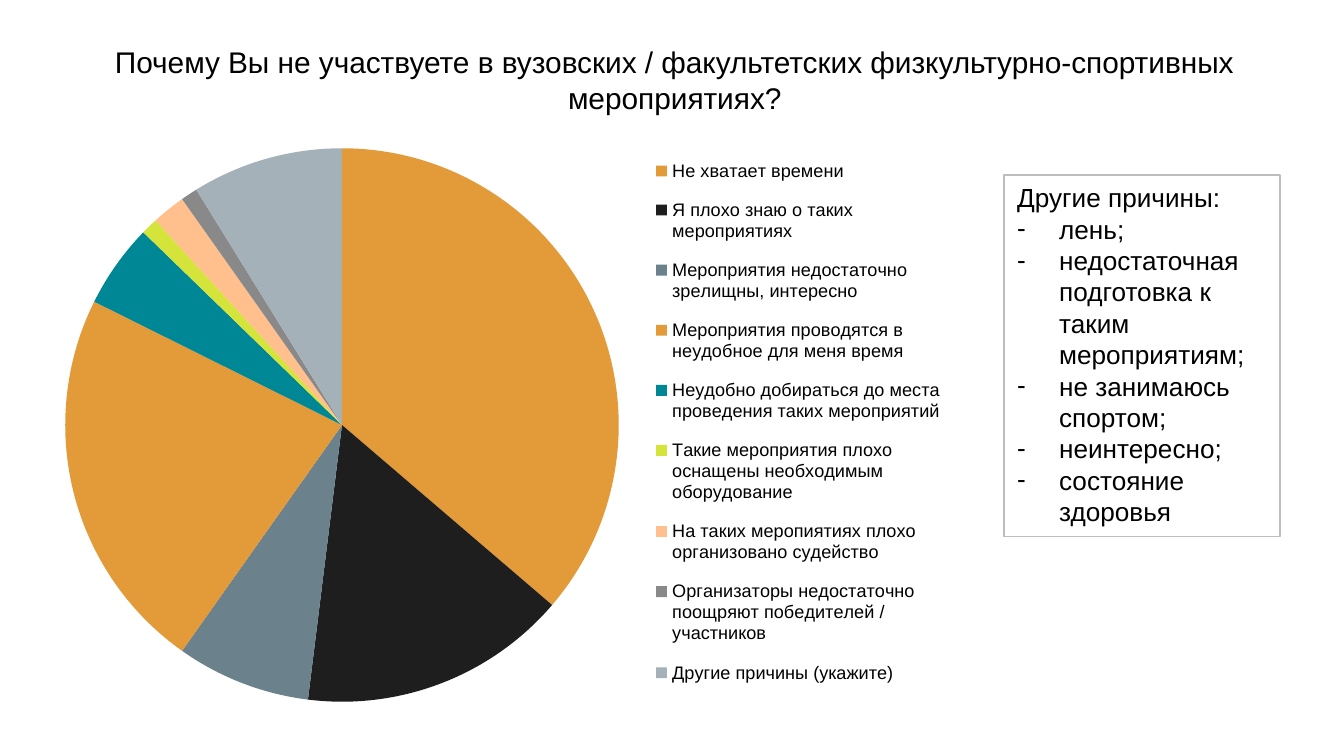
from lxml.etree import SubElement
from pptx import Presentation
from pptx.chart.data import CategoryChartData
from pptx.dml.color import RGBColor
from pptx.enum.chart import XL_CHART_TYPE, XL_LEGEND_POSITION
from pptx.enum.shapes import MSO_SHAPE
from pptx.enum.text import MSO_ANCHOR, PP_ALIGN
from pptx.oxml.ns import qn
from pptx.util import Pt

FONT = "Arial"
BLACK = RGBColor(0x00, 0x00, 0x00)
BORDER = RGBColor(0xBD, 0xBD, 0xBD)
ORANGE = RGBColor(0xE3, 0x9A, 0x39)
CHARCOAL = RGBColor(0x1E, 0x1E, 0x1E)
SLATE = RGBColor(0x6B, 0x81, 0x8B)
TEAL = RGBColor(0x00, 0x87, 0x96)
LIME = RGBColor(0xD5, 0xE4, 0x3A)
PEACH = RGBColor(0xFF, 0xC0, 0x8E)
GRAY = RGBColor(0x89, 0x89, 0x89)
PALE_SLATE = RGBColor(0xA5, 0xB1, 0xB9)

TITLE = "Почему Вы не участвуете в вузовских / факультетских физкультурно-спортивных мероприятиях?"
ANSWERS = [
    ("Не хватает времени", 37, ORANGE),
    ("Я плохо знаю о таких мероприятиях", 16, CHARCOAL),
    ("Мероприятия недостаточно зрелищны, интересно", 8, SLATE),
    ("Мероприятия проводятся в неудобное для меня время", 23, ORANGE),
    ("Неудобно добираться до места проведения таких мероприятий", 5, TEAL),
    ("Такие мероприятия плохо оснащены необходимым оборудование", 1, LIME),
    ("На таких меропиятиях плохо организовано судейство", 2, PEACH),
    ("Организаторы недостаточно поощряют победителей / участников", 1, GRAY),
    ("Другие причины (укажите)", 9, PALE_SLATE),
]
REASONS_HEADING = "Другие причины:"
REASONS = [
    "лень;",
    "недостаточная подготовка к таким мероприятиям;",
    "не занимаюсь спортом;",
    "неинтересно;",
    "состояние здоровья",
]


def style_font(font, size):
    font.name = FONT
    font.size = Pt(size)
    font.color.rgb = BLACK


def style_paragraph(paragraph, size, alignment):
    paragraph.alignment = alignment
    for run in paragraph.runs:
        style_font(run.font, size)


def add_dash(paragraph, indent):
    properties = paragraph._p.get_or_add_pPr()
    properties.set("marL", str(Pt(indent)))
    properties.set("indent", str(-Pt(indent)))
    color = SubElement(properties, qn("a:buClr"))
    SubElement(color, qn("a:srgbClr")).set("val", str(BLACK))
    SubElement(properties, qn("a:buFont")).set("typeface", FONT)
    SubElement(properties, qn("a:buChar")).set("char", "-")


def add_title(slide):
    text_frame = slide.shapes.add_textbox(Pt(26), Pt(15), Pt(671), Pt(55.5)).text_frame
    text_frame.word_wrap = True
    text_frame.vertical_anchor = MSO_ANCHOR.MIDDLE
    text_frame.text = TITLE
    style_paragraph(text_frame.paragraphs[0], 16, PP_ALIGN.CENTER)


def set_layout(element, target, **fractions):
    layout = element.find(qn("c:layout"))
    if layout is None:
        layout = element.makeelement(qn("c:layout"), {})
        element.insert(1 if target is None else 0, layout)
    manual = SubElement(layout, qn("c:manualLayout"))
    if target:
        SubElement(manual, qn("c:layoutTarget")).set("val", target)
    for name in ("xMode", "yMode"):
        SubElement(manual, qn(f"c:{name}")).set("val", "edge")
    for name, value in fractions.items():
        SubElement(manual, qn(f"c:{name}")).set("val", str(value))


def add_pie(slide):
    data = CategoryChartData()
    data.categories = [label for label, _, _ in ANSWERS]
    data.add_series("Series 1", [value for _, value, _ in ANSWERS])
    chart = slide.shapes.add_chart(
        XL_CHART_TYPE.PIE, Pt(14.4), Pt(70), Pt(504), Pt(315.5), data
    ).chart
    chart.has_title = False
    style_font(chart.font, 18)
    chart.has_legend = True
    legend = chart.legend
    legend.position = XL_LEGEND_POSITION.RIGHT
    legend.include_in_layout = False
    style_font(legend.font, 9.7)

    plot = chart.plots[0]
    plot.vary_by_categories = True
    for index, (_, _, color) in enumerate(ANSWERS):
        point_format = plot.series[0].points[index].format
        point_format.fill.solid()
        point_format.fill.fore_color.rgb = color
        point_format.line.fill.background()

    set_layout(chart._chartSpace.chart.plotArea, "inner", x=0.04, y=0.03, w=0.59, h=0.94)
    set_layout(legend._element, None, x=0.66, y=0.02, w=0.32, h=0.95)


def add_reasons(slide):
    shape = slide.shapes.add_shape(
        MSO_SHAPE.RECTANGLE, Pt(537.8), Pt(93.8), Pt(148), Pt(193.7)
    )
    shape.shadow.inherit = False
    shape.fill.background()
    shape.line.color.rgb = BORDER
    shape.line.width = Pt(0.75)
    text_frame = shape.text_frame
    text_frame.word_wrap = True
    text_frame.vertical_anchor = MSO_ANCHOR.TOP
    text_frame.text = "\n".join([REASONS_HEADING] + REASONS)
    for paragraph in text_frame.paragraphs:
        style_paragraph(paragraph, 14, PP_ALIGN.LEFT)
    for paragraph in text_frame.paragraphs[1:]:
        add_dash(paragraph, 22.5)


def main():
    presentation = Presentation()
    presentation.slide_width = Pt(720)
    presentation.slide_height = Pt(405)
    slide = presentation.slides.add_slide(presentation.slide_layouts[6])
    add_title(slide)
    add_pie(slide)
    add_reasons(slide)
    presentation.save("out.pptx")


if __name__ == "__main__":
    main()
